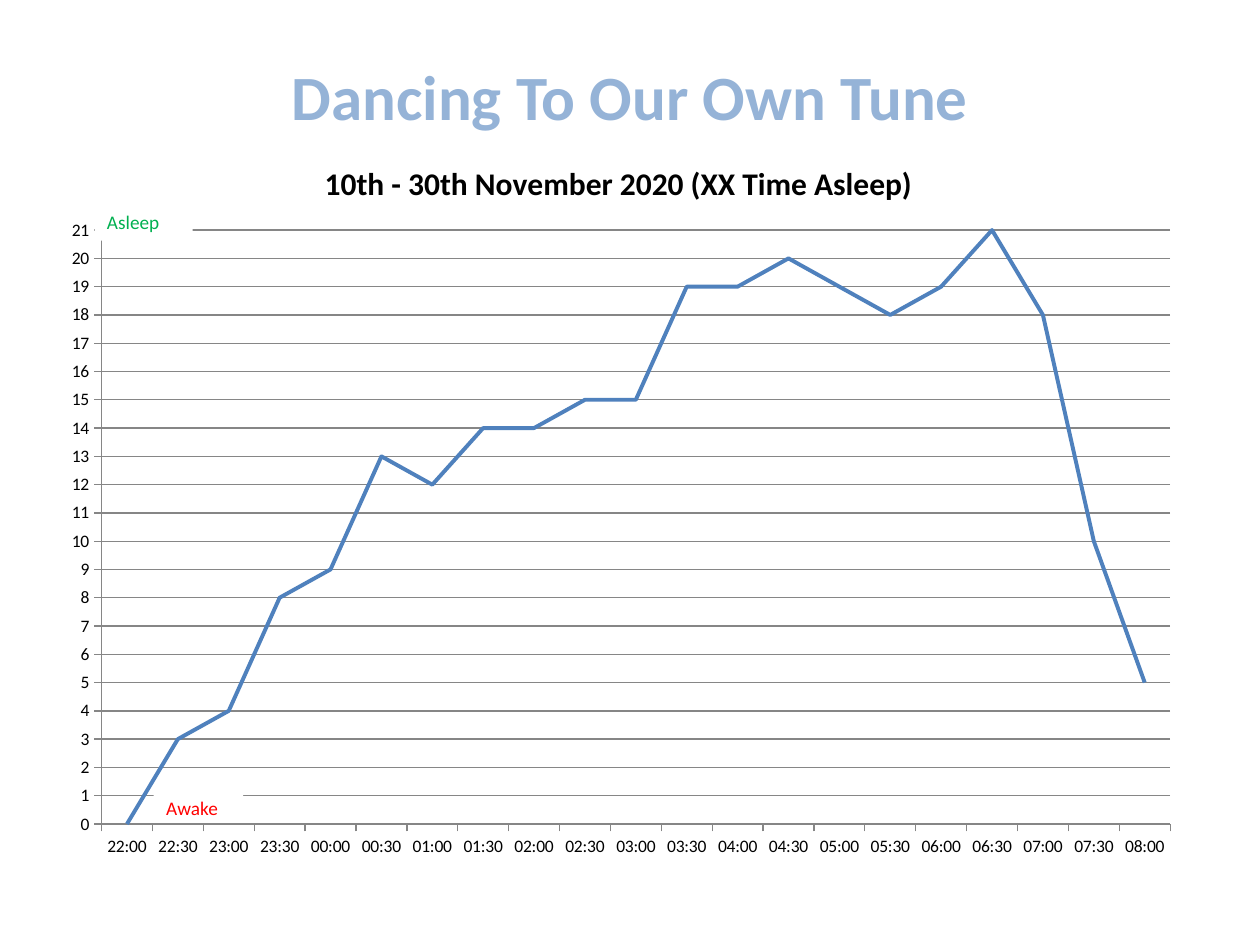
from lxml import etree
from pptx import Presentation
from pptx.chart.data import CategoryChartData as Data
from pptx.dml.color import RGBColor
from pptx.enum.chart import XL_CHART_TYPE as Kind, XL_TICK_MARK as Tick
from pptx.enum.shapes import MSO_SHAPE as Shape
from pptx.enum.text import MSO_ANCHOR as Anchor, PP_ALIGN as Align
from pptx.oxml.ns import qn
from pptx.util import Inches, Pt

HOURS = [f"{(22 + n // 2) % 24:02d}:{n % 2 * 30:02d}" for n in range(21)]
NIGHTS = [0, 3, 4, 8, 9, 13, 12, 14, 14, 15, 15,
          19, 19, 20, 19, 18, 19, 21, 18, 10, 5]


def tint(code):
    """Turn a hex string into a colour."""
    return RGBColor.from_string(code)


def style(font, size, code, bold=False):
    """Set the face, size, colour and weight of a font."""
    font.name, font.size, font.bold = "Calibri", Pt(size), bold
    font.color.rgb = tint(code)


def add_title(slide, box, text):
    """Place the centred heading."""
    frame = slide.shapes.add_textbox(*map(Inches, box)).text_frame
    frame.word_wrap = True
    frame.vertical_anchor = Anchor.MIDDLE
    para = frame.paragraphs[0]
    para.text, para.alignment = text, Align.CENTER
    style(para.font, 36, "95B3D7", True)


def set_plot(chart, **parts):
    """Fix the inner plot area as shares of the chart."""
    area = chart._chartSpace.chart.plotArea
    for old in area.findall(qn("c:layout")):
        area.remove(old)
    layout = etree.Element(qn("c:layout"))
    manual = etree.SubElement(layout, qn("c:manualLayout"))
    rules = {"layoutTarget": "inner", "xMode": "edge", "yMode": "edge", **parts}
    for name, val in rules.items():
        etree.SubElement(manual, qn(f"c:{name}")).set("val", str(val))
    area.insert(0, layout)


def add_graph(slide, box, title):
    """Place the line chart of nights asleep by time."""
    data = Data()
    data.categories = HOURS
    data.add_series("Series 1", NIGHTS)
    chart = slide.shapes.add_chart(Kind.LINE, *map(Inches, box), data).chart
    style(chart.font, 10, "000000")
    chart.has_legend = False
    chart.has_title = True
    frame = chart.chart_title.text_frame
    frame.text = title
    style(frame.paragraphs[0].font, 18, "000000", True)
    chart.chart_title.include_in_layout = False
    set_plot(chart, x=0.05, y=0.13, w=0.93, h=0.81)

    rise = chart.value_axis
    rise.minimum_scale, rise.maximum_scale, rise.major_unit = 0, 21, 1
    rise.has_major_gridlines = True
    for axis in (chart.category_axis, rise):
        axis.major_tick_mark = Tick.OUTSIDE
    for part in (chart.category_axis, rise, rise.major_gridlines):
        part.format.line.color.rgb = tint("868686")
        part.format.line.width = Pt(0.75)

    chart.plots[0].vary_by_categories = False
    line = chart.plots[0].series[0]
    line.smooth = False
    line.format.line.color.rgb = tint("4F81BD")
    line.format.line.width = Pt(2.25)


def add_label(slide, box, text, code):
    """Place a white tag with coloured text over the chart."""
    tag = slide.shapes.add_shape(Shape.RECTANGLE, *map(Inches, box))
    tag.shadow.inherit = False
    tag.fill.solid()
    tag.fill.fore_color.rgb = tint("FFFFFF")
    tag.line.fill.background()
    frame = tag.text_frame
    frame.vertical_anchor = Anchor.TOP
    para = frame.paragraphs[0]
    para.text, para.alignment = text, Align.LEFT
    style(para.font, 11, code)


def main():
    """Build and save the slide."""
    deck = Presentation()
    deck.slide_width, deck.slide_height = Inches(10), Inches(7.5)
    slide = deck.slides.add_slide(deck.slide_layouts[6])
    add_title(slide, (0, 0.13, 10, 1.25), "Dancing To Our Own Tune")
    add_graph(slide, (0.35, 1.07, 9.12, 5.82),
              "10th - 30th November 2020 (XX Time Asleep)")
    add_label(slide, (0.75, 1.62, 0.78, 0.29), "Asleep", "00B050")
    add_label(slide, (1.22, 6.27, 0.71, 0.22), "Awake", "FF0000")
    deck.save("out.pptx")


if __name__ == "__main__":
    main()
